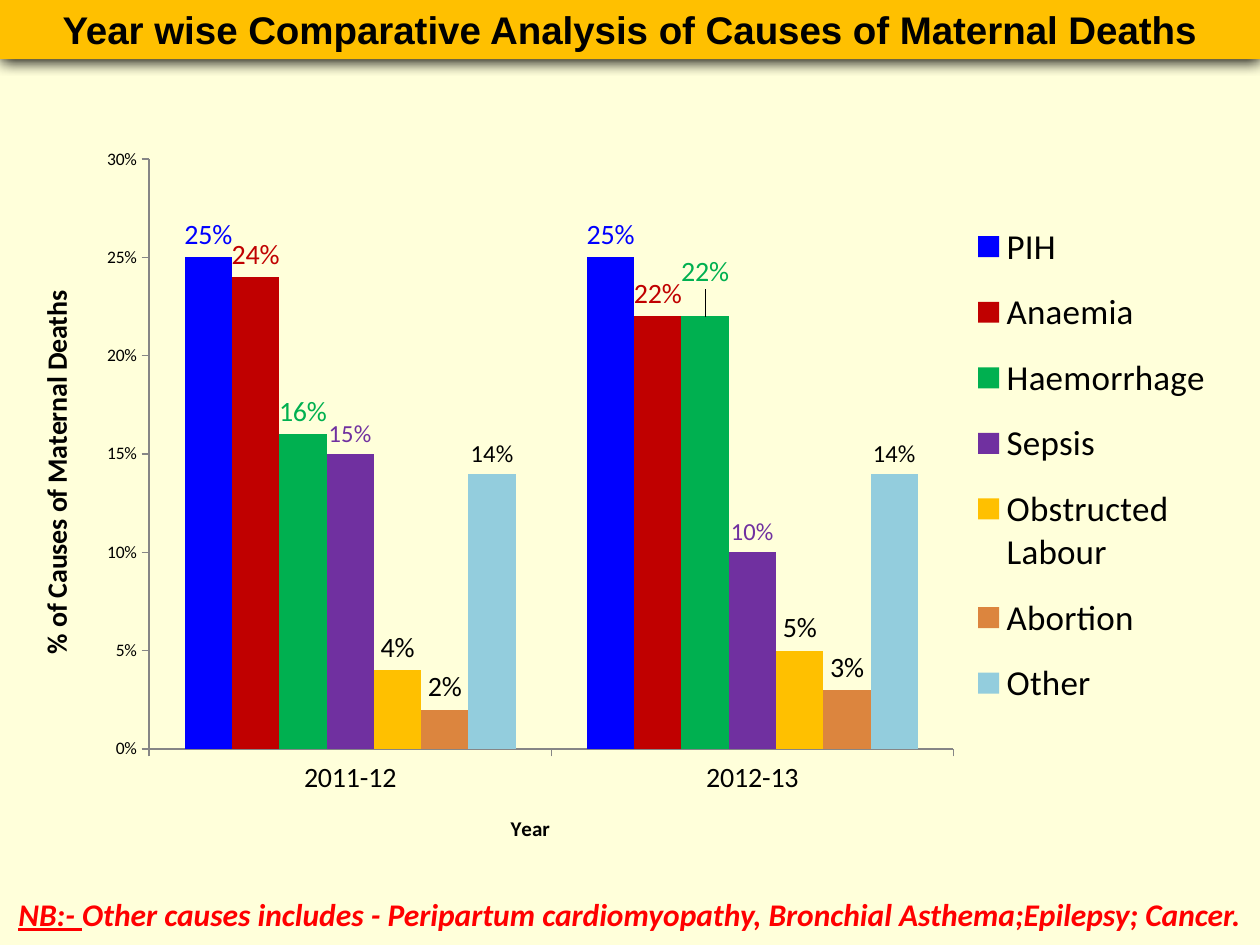
"""Build a slide comparing causes of maternal deaths by year."""
from lxml.etree import SubElement
from pptx import Presentation
from pptx.chart.data import CategoryChartData
from pptx.dml.color import RGBColor
from pptx.enum.chart import XL_CHART_TYPE, XL_LABEL_POSITION, XL_LEGEND_POSITION, XL_TICK_MARK
from pptx.enum.shapes import MSO_SHAPE
from pptx.enum.text import MSO_ANCHOR, PP_ALIGN
from pptx.oxml import parse_xml
from pptx.oxml.ns import nsdecls, qn
from pptx.util import Inches, Pt

COLORS = {
    "background": "FFFFDA", "banner": "FFC000", "text": "000000", "note": "FF0000",
    "axis": "868686", "blue": "0000FF", "red": "C00000", "green": "00B050",
    "purple": "7030A0", "orange": "DC853E", "sky": "93CDDD",
}
TITLE = "Year wise Comparative Analysis of Causes of Maternal Deaths"
NOTE = ("NB:- ", "Other causes includes - Peripartum cardiomyopathy, "
        "Bronchial Asthema;Epilepsy; Cancer.")
YEARS = ("2011-12", "2012-13")
CAUSES = [
    ("PIH", (0.25, 0.25), "blue", "blue", 16),
    ("Anaemia", (0.24, 0.22), "red", "red", 16),
    ("Haemorrhage", (0.16, 0.22), "green", "green", 16),
    ("Sepsis", (0.15, 0.10), "purple", "purple", 14),
    ("Obstructed Labour", (0.04, 0.05), "banner", "text", 16),
    ("Abortion", (0.02, 0.03), "orange", "text", 16),
    ("Other", (0.14, 0.14), "sky", "text", 14),
]


def rgb(name):
    return RGBColor.from_string(COLORS[name])


def style_font(font, size, color="text", name="Calibri", **flags):
    font.size, font.name = Pt(size), name
    font.color.rgb = rgb(color)
    for flag, value in flags.items():
        setattr(font, flag, value)


def add_run(p, text, **fmt):
    r = p.add_run()
    r.text = text
    style_font(r.font, **fmt)


def start_text(sp):
    tf = sp.text_frame
    tf.word_wrap = True
    tf.vertical_anchor = MSO_ANCHOR.MIDDLE
    p = tf.paragraphs[0]
    p.alignment = PP_ALIGN.CENTER
    return p


def set_layout(parent, index, **values):
    for old in parent.findall(qn("c:layout")):
        parent.remove(old)
    layout = parse_xml(f"<c:layout {nsdecls('c')}><c:manualLayout/></c:layout>")
    for tag, value in values.items():
        SubElement(layout[0], qn(f"c:{tag}")).set("val", str(value))
    parent.insert(index, layout)


def add_banner(s):
    sp = s.shapes.add_shape(MSO_SHAPE.RECTANGLE, 0, 0, Inches(10), Inches(0.47))
    sp.fill.solid()
    sp.fill.fore_color.rgb = rgb("banner")
    sp.line.fill.background()
    sp.shadow.inherit = False
    effects = sp._element.spPr.find(qn("a:effectLst"))
    effects.append(parse_xml(
        f'<a:outerShdw {nsdecls("a")} blurRad="{Pt(8.5)}" dist="{Pt(1)}" dir="5400000">'
        f'<a:srgbClr val="{COLORS["text"]}"/></a:outerShdw>'))
    add_run(start_text(sp), TITLE, size=22, name="Arial", bold=True)


def add_note(s):
    sp = s.shapes.add_textbox(0, Inches(7.05), Inches(10), Inches(0.4))
    p = start_text(sp)
    for text, underline in zip(NOTE, (True, False)):
        add_run(p, text, size=18, color="note", bold=True, italic=True, underline=underline)


def style_axis(axis, title, title_size, tick_size):
    axis.has_major_gridlines = False
    axis.major_tick_mark = XL_TICK_MARK.OUTSIDE
    axis.format.line.color.rgb = rgb("axis")
    style_font(axis.tick_labels.font, tick_size)
    p = axis.axis_title.text_frame.paragraphs[0]
    add_run(p, title, size=title_size, bold=True)


def add_causes_chart(s):
    data = CategoryChartData(number_format="0%")
    data.categories = YEARS
    for name, values, *_ in CAUSES:
        data.add_series(name, values)
    chart = s.shapes.add_chart(
        XL_CHART_TYPE.COLUMN_CLUSTERED, Inches(0.23), Inches(1.09),
        Inches(9.53), Inches(5.78), data).chart
    style_font(chart.font, 10)
    chart.has_title = False
    style_axis(chart.category_axis, "Year", 12, 16)
    style_axis(chart.value_axis, "% of Causes of Maternal Deaths", 16, 10)
    axis = chart.value_axis
    axis.minimum_scale, axis.maximum_scale, axis.major_unit = 0, 0.3, 0.05
    axis.tick_labels.number_format = "0%"
    axis.tick_labels.number_format_is_linked = False

    plot = chart.plots[0]
    plot.gap_width, plot.overlap, plot.vary_by_categories = 150, 0, False
    for series, (name, _, color, label_color, size) in zip(plot.series, CAUSES):
        series.format.fill.solid()
        series.format.fill.fore_color.rgb = rgb(color)
        labels = series.data_labels
        labels.show_value = True
        labels.number_format, labels.number_format_is_linked = "0%", False
        labels.position = XL_LABEL_POSITION.OUTSIDE_END
        style_font(labels.font, size, label_color)
        if name == "Haemorrhage":
            label = series.points[1].data_label
            style_font(label.font, size, label_color)
            label.position = XL_LABEL_POSITION.OUTSIDE_END
            set_layout(labels._element.find(qn("c:dLbl")), 1, x=0, y=-0.03)

    chart.has_legend = True
    legend = chart.legend
    legend.position = XL_LEGEND_POSITION.RIGHT
    legend.include_in_layout = False
    style_font(legend.font, 20)
    set_layout(legend._element, 1, xMode="edge", yMode="edge", x=0.78, y=0.09, w=0.21, h=0.72)
    set_layout(chart._chartSpace.chart.plotArea, 0, layoutTarget="inner",
               xMode="edge", yMode="edge", x=0.1, y=0.03, w=0.67, h=0.81)


def main():
    prs = Presentation()
    prs.slide_width, prs.slide_height = Inches(10), Inches(7.5)
    s = prs.slides.add_slide(prs.slide_layouts[6])
    s.background.fill.solid()
    s.background.fill.fore_color.rgb = rgb("background")
    add_banner(s)
    add_note(s)
    add_causes_chart(s)
    prs.save("out.pptx")


if __name__ == "__main__":
    main()
